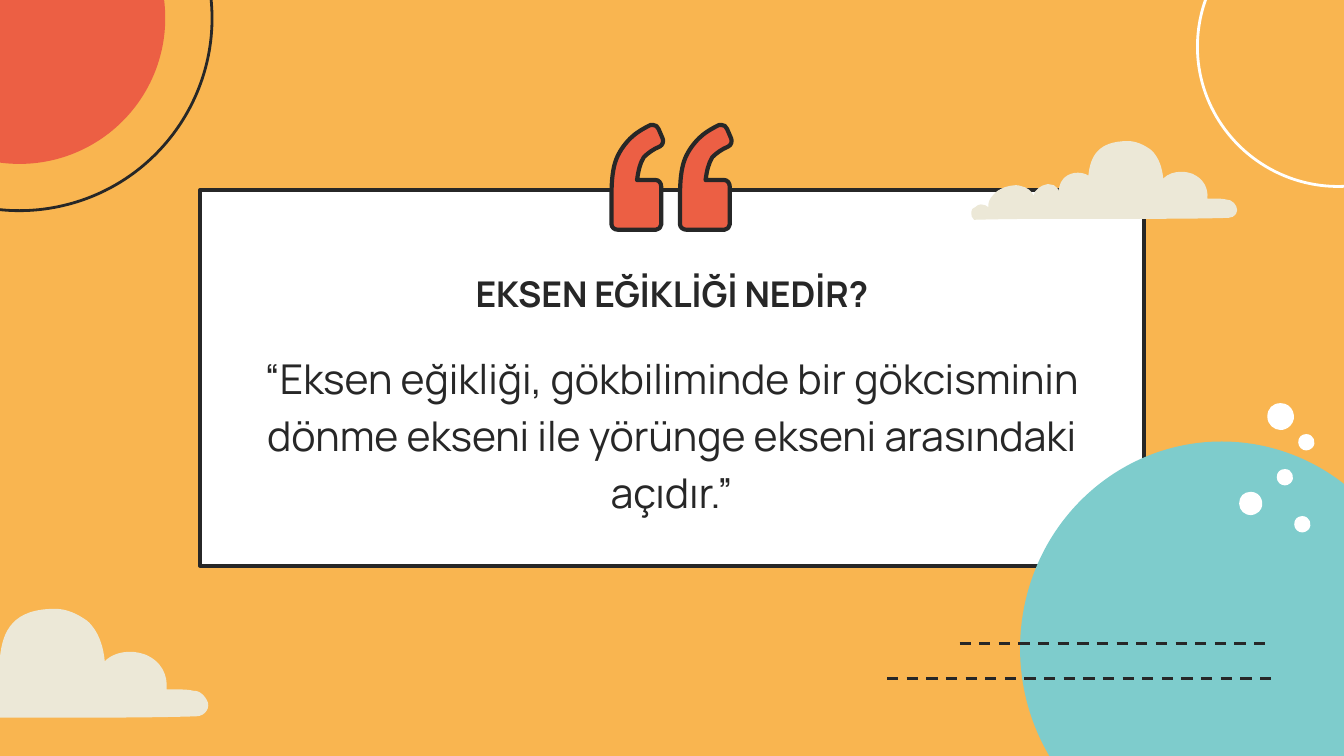
from dataclasses import dataclass
from typing import NamedTuple, Optional

from lxml import etree
from pptx import Presentation
from pptx import util as u
from pptx.dml.color import RGBColor
from pptx.enum import dml, shapes, text
from pptx.oxml.ns import qn

CELL = u.Inches(0.1)
COLUMNS, ROWS = 100, 56.25


@dataclass(frozen=True)
class Theme:
    background: str = "F9B550"
    ink: str = "272727"
    paper: str = "FFFFFF"
    coral: str = "EC5F44"
    teal: str = "7ECCCC"
    cloud: str = "ECE8D7"
    font: str = "Manrope"
    title_size: float = 19
    quote_size: float = 22
    thin: float = 1.5
    thick: float = 2.25


class Box(NamedTuple):
    column: float
    row: float
    columns: float
    rows: float


class Look(NamedTuple):
    fill: Optional[str] = None
    line: Optional[str] = None
    weight: float = 0


class Outline(NamedTuple):
    width: float
    start: tuple
    segments: list


class Dot(NamedTuple):
    column: float
    row: float
    columns: float


THEME = Theme()

CLOUD = Outline(280, (164, 0), [
    (133, 0, 125, 16, 123, 36), (120, 34, 116, 33, 112, 33),
    (102, 33, 93, 39, 92, 52), (92, 50, 89, 47, 87, 46),
    (85, 45, 84, 45, 82, 45), (81, 45, 80, 45, 80, 45),
    (76, 46, 73, 47, 71, 49), (68, 51, 66, 54, 66, 57),
    (64, 52, 59, 48, 53, 47), (51, 46, 49, 46, 47, 46),
    (43, 46, 40, 47, 36, 48), (31, 50, 27, 52, 24, 56),
    (20, 60, 18, 65, 19, 69), (17, 67, 14, 66, 11, 66),
    (9, 66, 7, 67, 5, 69), (4, 69, 3, 70, 2, 71),
    (2, 72, 1, 73, 1, 74), (0, 77, 2, 80, 4, 82),
    (40, 81, 77, 81, 115, 81), (133, 81, 151, 81, 168, 81),
    (203, 81, 237, 81, 269, 80), (276, 80, 280, 73, 277, 68), (277, 68),
    (276, 66, 275, 65, 274, 64), (272, 62, 270, 61, 267, 61),
    (263, 60, 259, 60, 255, 60), (252, 60, 250, 60, 247, 60),
    (248, 49, 243, 39, 231, 34), (228, 33, 224, 32, 220, 32),
    (213, 32, 206, 34, 201, 39), (200, 29, 197, 17, 188, 9),
    (181, 4, 173, 0, 164, 0),
])

QUOTE_MARK = Outline(39, (31, 0), [
    (30, 0, 30, 0, 29, 0), (23, 3, 18, 6, 14, 10),
    (9, 15, 5, 21, 3, 27), (1, 33, 0, 41, 0, 52), (0, 74),
    (0, 76, 2, 78, 5, 78), (33, 78), (35, 78, 37, 76, 37, 74), (37, 46),
    (37, 43, 35, 41, 33, 41), (19, 41), (20, 34, 21, 29, 24, 24),
    (27, 21, 31, 18, 36, 16), (38, 15, 39, 12, 38, 10), (35, 3),
    (34, 1, 33, 0, 31, 0),
])

WHITE_RING = Outline(217, (0, 104), [
    (0, 146, 26, 184, 65, 200), (104, 216, 149, 207, 179, 177),
    (208, 148, 217, 103, 201, 64), (185, 25, 147, 0, 105, 0),
    (47, 0, 0, 46, 0, 104),
])

SUN_RING = Outline(315, (297, 125), [
    (315, 202, 267, 279, 190, 297), (113, 315, 37, 267, 18, 190),
    (0, 113, 48, 36, 125, 18), (202, 0, 279, 48, 297, 125),
])

BUBBLE = Outline(23, (10, 0), [
    (4, 0, 0, 4, 0, 10), (0, 16, 5, 20, 10, 20),
    (12, 20, 15, 19, 17, 17), (23, 11, 19, 0, 10, 0),
])

DOTS = [Dot(92.2, 36.6, 2), Dot(95, 34.9, 1.4), Dot(96.3, 38.4, 1.4),
        Dot(96.6, 32.3, 1.4), Dot(94.3, 30, 2.3)]


def cells(count: float) -> int:
    return round(count * CELL)


def color(value: str) -> RGBColor:
    return RGBColor.from_string(value)


def apply_look(shape, look: Look) -> None:
    shape.shadow.inherit = False
    if look.fill:
        shape.fill.solid()
        shape.fill.fore_color.rgb = color(look.fill)
    else:
        shape.fill.background()
    if look.line:
        shape.line.color.rgb = color(look.line)
        shape.line.width = u.Pt(look.weight)
    else:
        shape.line.fill.background()


def draw_preset(slide, kind, box: Box, look: Look) -> None:
    shape = slide.shapes.add_shape(kind, *(cells(length) for length in box))
    apply_look(shape, look)


def bend_segments(shape, segments: list) -> None:
    steps = list(shape.element.iter(qn("a:lnTo")))
    for segment in segments:
        count = len(segment) // 2
        group, steps = steps[:count], steps[count:]
        if count == 3:
            curve = etree.Element(qn("a:cubicBezTo"))
            group[0].addprevious(curve)
            for step in group:
                curve.append(step[0])
                step.getparent().remove(step)


def draw_outline(slide, outline: Outline, column: float, row: float,
                 columns: float, look: Look) -> None:
    scale = columns / outline.width
    points = [outline.start]
    for segment in outline.segments:
        points.extend(zip(segment[::2], segment[1::2]))
    start, *others = [(cells(column + x * scale), cells(row + y * scale))
                      for x, y in points]
    builder = slide.shapes.build_freeform(*start)
    builder.add_line_segments(others, close=True)
    shape = builder.convert_to_shape()
    bend_segments(shape, outline.segments)
    apply_look(shape, look)


def draw_dashes(slide, start: float, end: float, row: float) -> None:
    connector = slide.shapes.add_connector(
        shapes.MSO_CONNECTOR.STRAIGHT, cells(start), cells(row), cells(end), cells(row))
    connector.line.color.rgb = color(THEME.ink)
    connector.line.width = u.Pt(THEME.thin)
    connector.line.dash_style = dml.MSO_LINE.DASH
    etree.SubElement(connector.element.spPr, qn("a:effectLst"))


def write_placeholder(placeholder, box: Box, wording: str, size: float,
                      bold: bool, spacing: float) -> None:
    placeholder.left, placeholder.top, placeholder.width, placeholder.height = map(cells, box)
    frame = placeholder.text_frame
    frame.text = wording
    frame.word_wrap = True
    frame.auto_size = text.MSO_AUTO_SIZE.NONE
    frame.vertical_anchor = text.MSO_ANCHOR.MIDDLE
    frame.margin_left = frame.margin_right = cells(1)
    frame.margin_top = frame.margin_bottom = cells(1)
    paragraph = frame.paragraphs[0]
    paragraph.alignment = text.PP_ALIGN.CENTER
    paragraph.line_spacing = spacing
    paragraph.space_before = u.Pt(0)
    font = paragraph.runs[0].font
    font.name, font.size, font.bold = THEME.font, u.Pt(size), bold
    font.color.rgb = color(THEME.ink)
    placeholder.element.getparent().append(placeholder.element)


def main() -> None:
    presentation = Presentation()
    presentation.slide_width, presentation.slide_height = cells(COLUMNS), cells(ROWS)
    slide = presentation.slides.add_slide(presentation.slide_layouts[0])
    slide.background.fill.solid()
    slide.background.fill.fore_color.rgb = color(THEME.background)
    title, quote = slide.placeholders
    oval, rectangle = shapes.MSO_SHAPE.OVAL, shapes.MSO_SHAPE.RECTANGLE

    draw_outline(slide, WHITE_RING, 89.1, -6.9, 21.7, Look(None, THEME.paper, THEME.thin))
    draw_outline(slide, CLOUD, -12.3, 45.3, 28, Look(THEME.cloud))
    draw_outline(slide, SUN_RING, -14.3, -14.4, 31.5, Look(None, THEME.ink, THEME.thin))
    draw_preset(slide, oval, Box(-9.4, -9.5, 21.7, 21.7), Look(THEME.coral))

    draw_preset(slide, rectangle, Box(14.9, 14.15, 70.25, 27.95),
                Look(THEME.paper, THEME.ink, THEME.thick))
    write_placeholder(title, Box(27.2, 18.7, 45.6, 6.3), "EKSEN EĞİKLİĞİ NEDİR?",
                      THEME.title_size, True, 1.0)
    write_placeholder(quote, Box(18.55, 23.4, 62.85, 17.4),
                      "“Eksen eğikliği, gökbiliminde bir gökcisminin dönme ekseni "
                      "ile yörünge ekseni arasındaki açıdır.”",
                      THEME.quote_size, False, 1.15)
    for column in (45.5, 50.6):
        draw_outline(slide, QUOTE_MARK, column, 9.3, 3.9,
                     Look(THEME.coral, THEME.ink, THEME.thick))

    draw_preset(slide, oval, Box(75.9, 32.85, 30, 30.8), Look(THEME.teal))
    for dot in DOTS:
        draw_outline(slide, BUBBLE, *dot, Look(THEME.paper))
    for start, row in ((71.4, 47.9), (66, 50.5)):
        draw_dashes(slide, start, 94.7, row)
    draw_outline(slide, CLOUD, 72.2, 10.5, 20, Look(THEME.cloud))

    presentation.save("out.pptx")


if __name__ == "__main__":
    main()
